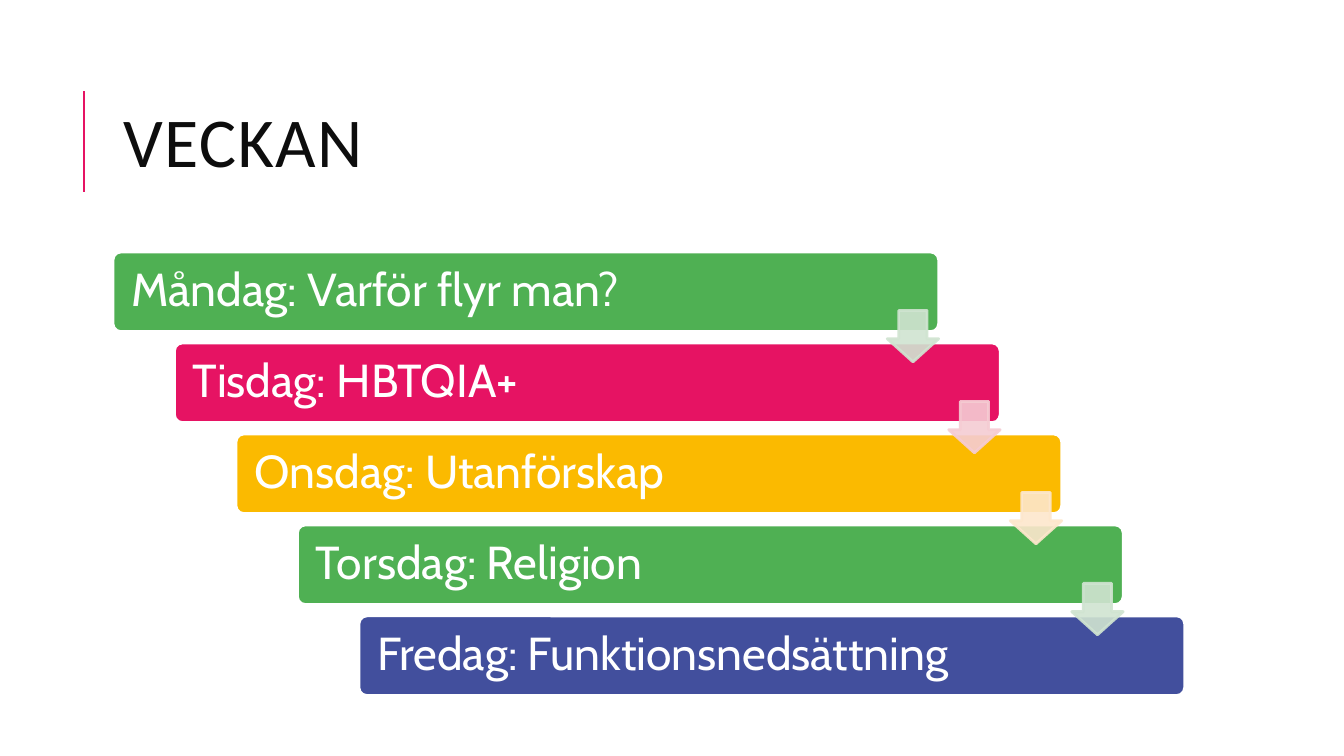
import pptx
import pptx.dml.color
import pptx.enum.shapes
import pptx.enum.text
import pptx.oxml.ns
import pptx.util
from dataclasses import dataclass
from lxml import etree

SHAPE = pptx.enum.shapes.MSO_SHAPE
ANCHOR = pptx.enum.text.MSO_ANCHOR
ALIGN = pptx.enum.text.PP_ALIGN


@dataclass(frozen=True)
class Theme:
    ink: str = "0D0D0D"
    white: str = "FFFFFF"
    green: str = "4FB053"
    pink: str = "E61363"
    yellow: str = "FBBA00"
    blue: str = "424F9D"
    pale_green: str = "D0E4D1"
    pale_pink: str = "F5CCD3"
    pale_yellow: str = "FDE7CC"
    title_font: str = "Calibri"
    body_font: str = "Cabin"
    title_size: int = 50
    body_size: int = 33


@dataclass(frozen=True)
class Stairs:
    """Grid of the staircase in inches: one column and one row per day."""
    left: float = 1.12
    top: float = 2.5
    column: float = 0.61
    row: float = 3.61 / 4
    bar_width: float = 8.19
    bar_height: float = 0.79
    arrow_size: float = 0.51
    arrow_drop: float = 0.58

    def corner(self, step):
        return self.left + step * self.column, self.top + step * self.row


class WeekPage:
    def __init__(self, deck, theme, stairs):
        self.theme = theme
        self.stairs = stairs
        self.page = deck.slides.add_slide(deck.slide_layouts[5])

    def color(self, value):
        return pptx.dml.color.RGBColor.from_string(value)

    def format_text(self, frame, font, size, color, spacing):
        frame.word_wrap = True
        frame.auto_size = pptx.enum.text.MSO_AUTO_SIZE.NONE
        frame.vertical_anchor = ANCHOR.MIDDLE
        para = frame.paragraphs[0]
        para.alignment = ALIGN.LEFT
        para.line_spacing = spacing
        span = para.runs[0]
        span.font.name = font
        span.font.size = pptx.util.Pt(size)
        span.font.color.rgb = self.color(color)
        return span

    def title(self, text, left, top, width, height):
        box = self.page.shapes.title
        box.left, box.top, box.width, box.height = map(
            pptx.util.Inches, (left, top, width, height))
        box.text_frame.text = text
        span = self.format_text(box.text_frame, self.theme.title_font,
                                self.theme.title_size, self.theme.ink, 0.8)
        span._r.get_or_add_rPr().set("spc", "100")

    def rule(self, left, bottom, top):
        line = self.page.shapes.add_connector(
            pptx.enum.shapes.MSO_CONNECTOR.STRAIGHT,
            *map(pptx.util.Inches, (left, bottom, left, top)))
        line.line.color.rgb = self.color(self.theme.pink)
        line.line.width = pptx.util.Pt(1.5)
        etree.SubElement(line._element.spPr, pptx.oxml.ns.qn("a:effectLst"))

    def shape(self, kind, left, top, width, height, fill, line, adjustments):
        box = self.page.shapes.add_shape(
            kind, *map(pptx.util.Inches, (left, top, width, height)))
        box.shadow.inherit = False
        box.fill.solid()
        box.fill.fore_color.rgb = self.color(fill)
        box.line.color.rgb = self.color(line)
        box.line.width = pptx.util.Pt(2)
        for index, value in enumerate(adjustments):
            box.adjustments[index] = value
        return box

    def bar(self, step, text, fill):
        grid = self.stairs
        box = self.shape(SHAPE.ROUNDED_RECTANGLE, *grid.corner(step),
                         grid.bar_width, grid.bar_height,
                         fill, self.theme.white, [0.1])
        frame = box.text_frame
        frame.margin_left = frame.margin_right = pptx.util.Inches(0.16)
        frame.text = text
        self.format_text(frame, self.theme.body_font, self.theme.body_size,
                         self.theme.white, 0.9)

    def arrow(self, step, color):
        grid = self.stairs
        left, top = grid.corner(step)
        box = self.shape(SHAPE.DOWN_ARROW,
                         left + grid.bar_width - grid.arrow_size,
                         top + grid.arrow_drop,
                         grid.arrow_size, grid.arrow_size,
                         color, color, [0.55, 0.45])
        # Fill and outline are 90 % opaque
        for tone in box._element.spPr.iter(pptx.oxml.ns.qn("a:srgbClr")):
            etree.SubElement(tone, pptx.oxml.ns.qn("a:alpha"), val="90000")


def main():
    deck = pptx.Presentation()
    deck.slide_width = pptx.util.Inches(13.33)
    deck.slide_height = pptx.util.Inches(7.5)
    theme = Theme()
    week = WeekPage(deck, theme, Stairs())

    # Heading with its accent line
    week.rule(0.83, 1.9, 0.9)
    week.title("VECKAN", 1.12, 0.64, 10.63, 1.64)

    # One bar per day
    days = [
        ("Måndag: Varför flyr man?", theme.green),
        ("Tisdag: HBTQIA+", theme.pink),
        ("Onsdag: Utanförskap", theme.yellow),
        ("Torsdag: Religion", theme.green),
        ("Fredag: Funktionsnedsättning", theme.blue),
    ]
    for step, (text, fill) in enumerate(days):
        week.bar(step, text, fill)

    # Arrows leading from each day to the next
    tints = [theme.pale_green, theme.pale_pink, theme.pale_yellow, theme.pale_green]
    for step, tint in enumerate(tints):
        week.arrow(step, tint)

    deck.save("out.pptx")


if __name__ == "__main__":
    main()
